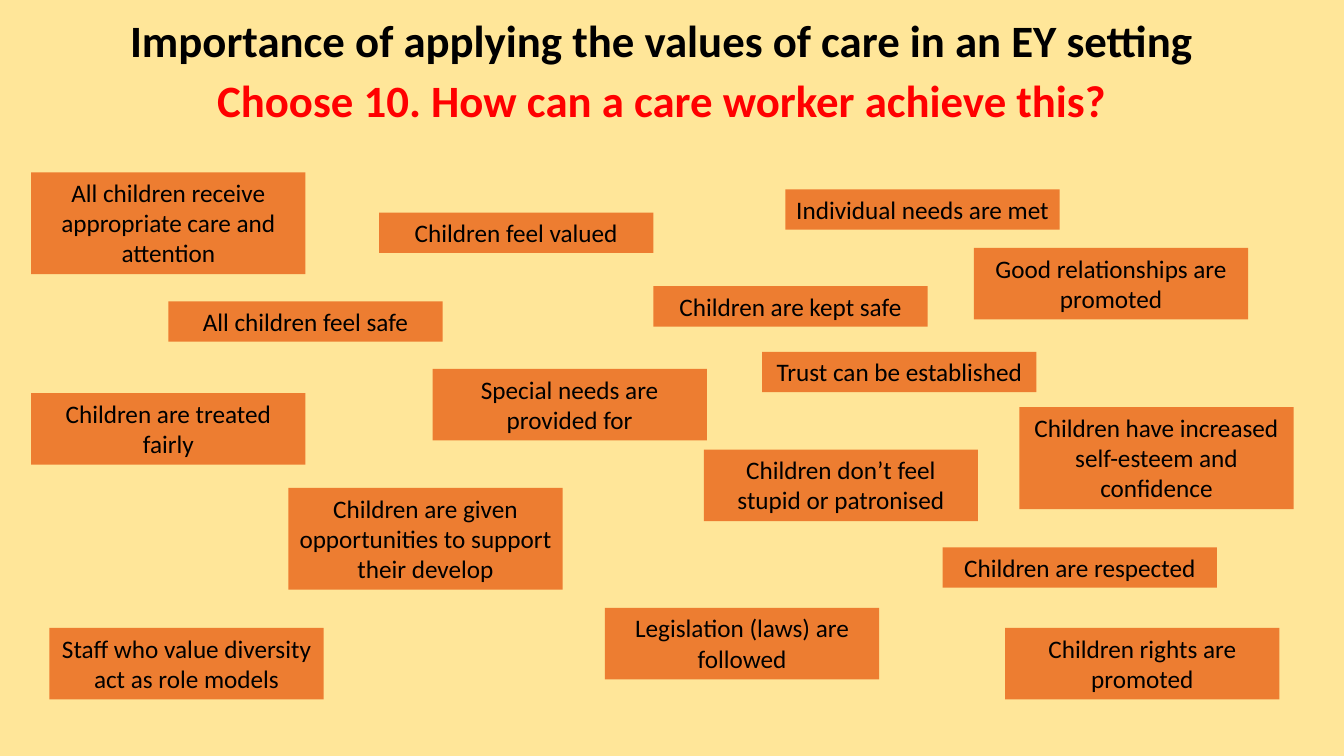
from pptx import Presentation
from pptx.dml.color import RGBColor
from pptx.enum.shapes import MSO_SHAPE
from pptx.enum.text import MSO_ANCHOR, MSO_AUTO_SIZE, PP_ALIGN
from pptx.util import Emu, Pt

RECT = MSO_SHAPE.RECTANGLE
MIDDLE = MSO_ANCHOR.MIDDLE
TOP = MSO_ANCHOR.TOP
GROW = MSO_AUTO_SIZE.SHAPE_TO_FIT_TEXT
CENTER = PP_ALIGN.CENTER

CREAM = RGBColor(0xFF, 0xE6, 0x99)
ORANGE = RGBColor(0xED, 0x7D, 0x31)
BLACK = RGBColor(0x00, 0x00, 0x00)
RED = RGBColor(0xFF, 0x00, 0x00)

FONT = "Calibri"
SCALE = 9144
CARD_WIDTH = 272
CARD_HEIGHTS = {1: 40, 2: 71, 3: 101}

HEADINGS = [
    ("Importance of applying the values of care in an EY setting", BLACK),
    ("Choose 10. How can a care worker achieve this?", RED),
]

CARDS = [
    (31, 171, 3, "All children receive appropriate care and attention"),
    (167, 299, 1, "All children feel safe"),
    (376, 211, 1, "Children feel valued"),
    (648, 284, 1, "Children are kept safe"),
    (779, 188, 1, "Individual needs are met"),
    (286, 484, 3, "Children are given opportunities to support their develop"),
    (31, 390, 2, "Children are treated fairly"),
    (429, 366, 2, "Special needs are provided for"),
    (966, 246, 2, "Good relationships are promoted"),
    (756, 349, 1, "Trust can be established"),
    (1011, 404, 3, "Children have increased self-esteem and confidence"),
    (935, 543, 1, "Children are respected"),
    (997, 623, 2, "Children rights are promoted"),
    (600, 603, 2, "Legislation (laws) are followed"),
    (49, 623, 2, "Staff who value diversity act as role models"),
    (698, 446, 2, "Children don’t feel stupid or patronised"),
]


def px(size):
    return Emu(size * SCALE)


def write(shape, text, size, color, bold, anchor):
    frame = shape.text_frame
    frame.text = text
    frame.word_wrap = True
    frame.vertical_anchor = anchor
    line = frame.paragraphs[0]
    line.alignment = CENTER
    font = line.runs[0].font
    font.name = FONT
    font.size = Pt(size)
    font.bold = bold
    font.color.rgb = color
    return frame


def add_header(slide, left, top, width, height):
    step = height // len(HEADINGS)
    for row, (text, color) in enumerate(HEADINGS):
        box = slide.shapes.add_textbox(
            px(left), px(top + row * step), px(width), px(49))
        frame = write(box, text, 32, color, True, MIDDLE)
        frame.paragraphs[0].line_spacing = 0.9


def add_card(slide, left, top, width, height, text):
    card = slide.shapes.add_shape(
        RECT, px(left), px(top), px(width), px(height))
    card.shadow.inherit = False
    card.fill.solid()
    card.fill.fore_color.rgb = ORANGE
    card.line.fill.background()
    frame = write(card, text, 18, BLACK, False, TOP)
    frame.auto_size = GROW


def main():
    deck = Presentation()
    deck.slide_width = px(1333)
    deck.slide_height = px(750)
    slide = deck.slides.add_slide(deck.slide_layouts[6])
    slide.background.fill.solid()
    slide.background.fill.fore_color.rgb = CREAM
    add_header(slide, 68, 18, 1177, 120)
    for left, top, lines, text in CARDS:
        add_card(slide, left, top, CARD_WIDTH, CARD_HEIGHTS[lines], text)
    deck.save("out.pptx")


if __name__ == "__main__":
    main()
